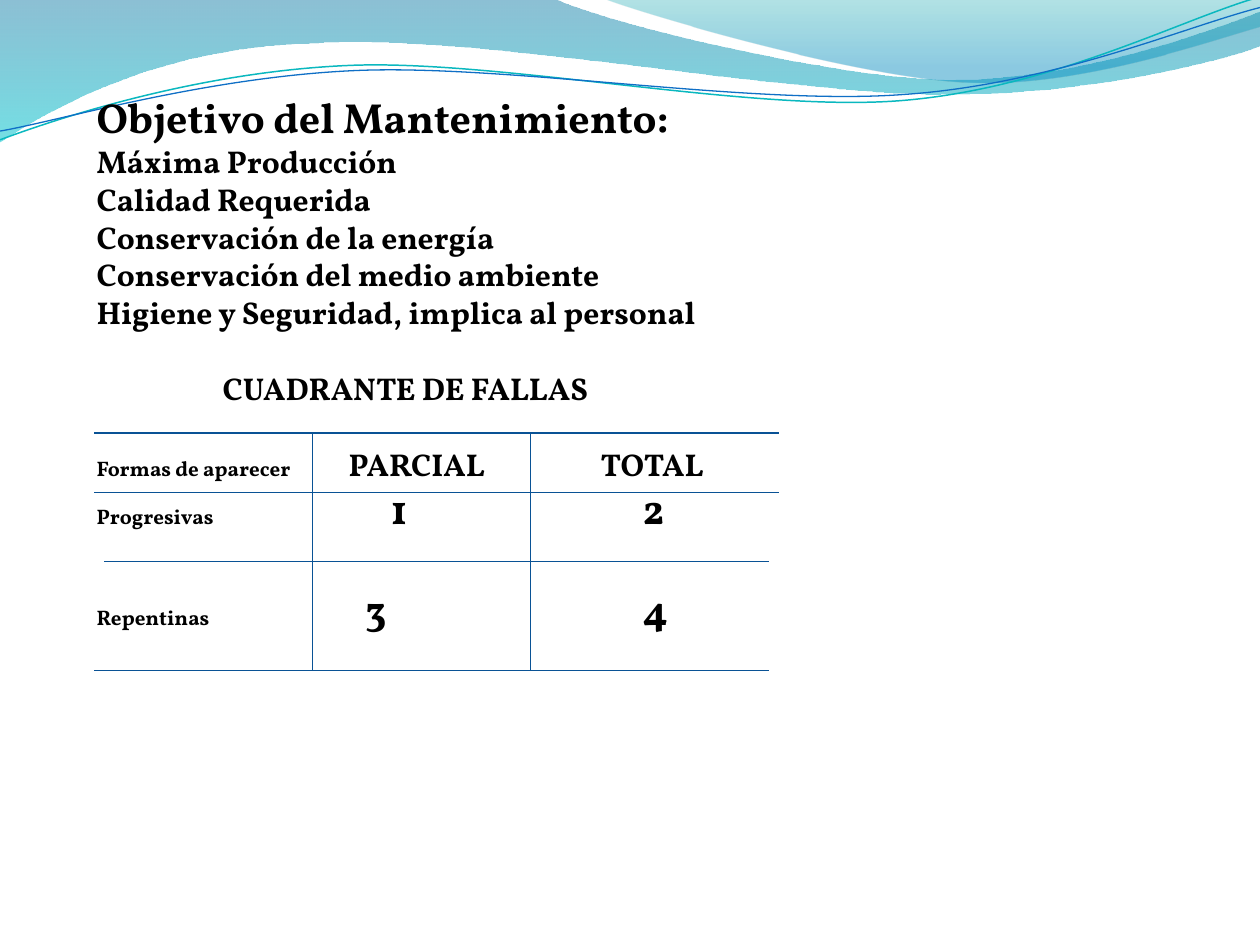
from math import cos, radians, sin

from lxml.etree import SubElement
from pptx import Presentation
from pptx.dml.color import RGBColor
from pptx.enum.shapes import MSO_CONNECTOR as Conn
from pptx.oxml.ns import qn
from pptx.util import Pt

FONT = "Vollkorn"
BLACK = RGBColor(0, 0, 0)
RULE = RGBColor(0x09, 0x52, 0x95)
TEAL = RGBColor(0x0A, 0xB8, 0xBF)
BLUE = RGBColor(0x0F, 0x6F, 0xC6)
DEEP = RGBColor(0x00, 0x74, 0xA1)
AQUA = RGBColor(0x00, 0xC6, 0xCF)
SEA = RGBColor(0x00, 0xA1, 0xA9)
SKY = RGBColor(0x00, 0x8B, 0xBF)
TILT = 2.7

# Each step holds one point for a line, or three for a Bezier curve.
WAVE = [
    [(0, 0)],
    [(316.8, -0.7)],
    [(342.7, 12.2), (478.1, 45.4), (545.8, 45.4)],
    [(614.2, 45.4), (689.8, 18.7), (720, 6.5)],
    [(720.7, 25.9)],
    [(707.8, 31.7), (626.4, 54.7), (537.1, 54)],
    [(447.8, 54), (275, 20.2), (185, 24.5)],
    [(92.9, 25.9), (33.1, 59.8), (-0.7, 81.4)],
]
CREST = [
    [(344.9, -0.7)],
    [(366.5, 7.9), (491, 44.6), (553.7, 46.8)],
    [(616.3, 49.7), (691.9, 23), (720, 15.1)],
    [(720, 0)],
]
UPPER = [
    [(0, 79.9)],
    [(34.6, 67), (113.8, 41), (199.4, 37.4)],
    [(284.4, 33.8), (427, 64.1), (513.4, 57.6)],
    [(599.8, 51.1), (675.4, 10.8), (718.6, -1.4)],
]
LOWER = [
    [(0, 74.9)],
    [(33.8, 69.1), (118.1, 43.9), (203.8, 40.3)],
    [(290.2, 36.7), (429.8, 60.5), (516.2, 54)],
    [(601.9, 48.2), (677.5, 15.1), (720, 4.3)],
]

GOALS = [
    "Máxima Producción",
    "Calidad Requerida",
    "Conservación de la energía",
    "Conservación del medio ambiente",
    "Higiene y Seguridad, implica al personal",
]
# Runs as (text, size), tab stops, space before
ROWS = [
    ([("\tCUADRANTE DE FALLAS", 18)], [72], 21.7),
    ([("Formas de aparecer", 12), ("\tPARCIAL\tTOTAL", 18)], [144, 288], 21.7),
    ([("Progresivas", 12), ("\t1\t2", 24)], [168, 312], 0),
    ([("Repentinas", 12), ("\t3\t4", 24)], [153.5, 312], 28.9),
]

LEFT, TOP, BASE = 53.8, 247.4, 383.2
RULES = [
    (LEFT, TOP, 445, TOP),
    (LEFT, 281.5, 445, 281.5),
    (59.5, 320.8, 439.2, 320.8),
    (LEFT, BASE, 439.2, BASE),
    (178.6, TOP, 178.6, BASE),
    (303.1, TOP, 303.1, BASE),
]


def add_path(slide, steps, close):
    """Draw the steps as lines, then bend those that are curves."""
    ends = [(Pt(x), Pt(y)) for x, y in (step[-1] for step in steps)]
    pen = slide.shapes.build_freeform(*ends[0])
    pen.add_line_segments(ends[1:], close=close)
    shape = pen.convert_to_shape()
    shape.shadow.inherit = False
    lines = list(shape.element.spPr.iter(qn("a:lnTo")))
    for line, step in zip(lines, steps[1:]):
        if len(step) == 3:
            bend = SubElement(line.getparent(), qn("a:cubicBezTo"))
            line.addprevious(bend)
            line.getparent().remove(line)
            for x, y in step:
                SubElement(bend, qn("a:pt"), x=str(Pt(x) - shape.left),
                           y=str(Pt(y) - shape.top))
    return shape


def add_wave(slide, steps, stops):
    """Add a closed outline with a see-through gradient, top to bottom."""
    shape = add_path(slide, steps, True)
    shape.line.fill.background()
    shape.fill.gradient()
    shape.fill.gradient_angle = 270
    for stop, (place, color, alpha) in zip(shape.fill.gradient_stops, stops):
        stop.position = place
        stop.color.rgb = color
    tags = shape.element.spPr.iter(qn("a:srgbClr"))
    for tag, (place, color, alpha) in zip(tags, stops):
        SubElement(tag, qn("a:alpha"), val=str(alpha * 1000))


def turn(point, mid):
    """Turn a point clockwise by TILT about mid."""
    x, y = point[0] - mid[0], point[1] - mid[1]
    c, s = cos(radians(TILT)), sin(radians(TILT))
    return mid[0] + x * c - y * s, mid[1] + x * s + y * c


def add_curve(slide, steps, mid, color, width):
    """Add an open curve as a level shape that is tilted back."""
    level = [[turn(point, mid) for point in step] for step in steps]
    shape = add_path(slide, level, False)
    shape.rotation = 360 - TILT
    shape.fill.background()
    shape.line.color.rgb = color
    shape.line.width = Pt(width)


def add_rule(slide, ends):
    rule = slide.shapes.add_connector(Conn.STRAIGHT, *map(Pt, ends))
    rule.line.color.rgb = RULE
    rule.line.width = Pt(0.75)
    SubElement(rule.element.spPr, qn("a:effectLst"))


def fill_para(para, runs, tabs=(), before=0):
    para.space_before = Pt(before)
    if tabs:
        stops = SubElement(para._p.get_or_add_pPr(), qn("a:tabLst"))
        for tab in tabs:
            SubElement(stops, qn("a:tab"), pos=str(Pt(tab)), algn="l")
    for text, size in runs:
        run = para.add_run()
        run.text = text
        font = run.font
        font.name, font.size, font.bold = FONT, Pt(size), True
        font.color.rgb = BLACK


def add_text(slide):
    box = slide.shapes.add_textbox(Pt(48.1), Pt(48.8), Pt(618), Pt(342))
    frame = box.text_frame
    frame.word_wrap = True
    fill_para(frame.paragraphs[0], [("Objetivo del Mantenimiento:", 24)])
    for goal in GOALS:
        fill_para(frame.add_paragraph(), [(goal, 18)])
    for row in ROWS:
        fill_para(frame.add_paragraph(), *row)


def main():
    deck = Presentation()
    deck.slide_width, deck.slide_height = Pt(720), Pt(540)
    slide = deck.slides.add_slide(deck.slide_layouts[6])
    add_wave(slide, WAVE, [(0, DEEP, 45), (1, AQUA, 55)])
    add_wave(slide, CREST, [(0, SEA, 30), (0.8, SKY, 45)])
    add_curve(slide, UPPER, (359.3, 41.4), TEAL, 0.85)
    add_curve(slide, LOWER, (359.6, 42.5), BLUE, 0.75)
    add_text(slide)
    for ends in RULES:
        add_rule(slide, ends)
    deck.save("out.pptx")


if __name__ == "__main__":
    main()
